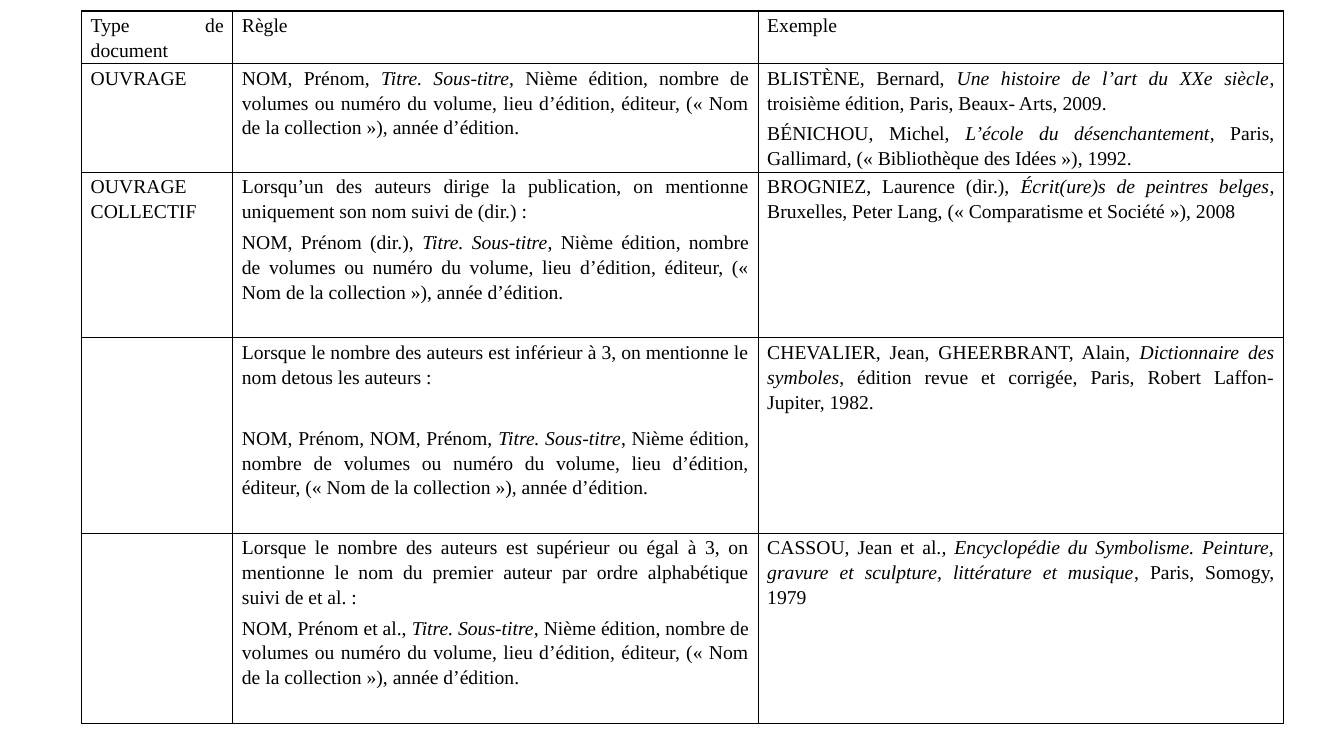
from dataclasses import dataclass

from lxml import etree
from pptx import Presentation
from pptx.dml.color import RGBColor
from pptx.enum import text
from pptx.oxml.ns import qn
from pptx.util import Inches, Pt


@dataclass(frozen=True)
class Theme:
    font: str = "Times New Roman"
    size: float = 14
    ink: str = "000000"
    border: float = 1
    line_spacing: float = 1.15
    space_after: float = 4
    section_gap: float = 21.8


THEME = Theme()
COLUMNS = [1.5, 5.21, 5.21]
ROWS = [0.52, 1.08, 1.64, 1.94, 1.89]
EDITION = (" Nième édition, nombre de volumes ou numéro du volume, lieu d’édition, "
           "éditeur, (« Nom de la collection »), année d’édition.")
TITLE_RULE = "*Titre. Sous-titre*," + EDITION

# Each cell is a list of paragraphs; asterisks enclose italics.
CONTENT = [
    [["Type de document"], ["Règle"], ["Exemple"]],
    [["OUVRAGE"],
     ["NOM, Prénom, *Titre. Sous-titre,*" + EDITION],
     ["BLISTÈNE, Bernard, *Une histoire de l’art du XXe siècle*, troisième édition, "
      "Paris, Beaux- Arts, 2009.",
      "BÉNICHOU, Michel, *L’école du désenchantement*, Paris, Gallimard, "
      "(« Bibliothèque des Idées »), 1992."]],
    [["OUVRAGE COLLECTIF"],
     ["Lorsqu’un des auteurs dirige la publication, on mentionne uniquement "
      "son nom suivi de (dir.) :",
      "NOM, Prénom (dir.), " + TITLE_RULE],
     ["BROGNIEZ, Laurence (dir.), *Écrit(ure)s de peintres belges*, Bruxelles, "
      "Peter Lang, (« Comparatisme et Société »), 2008"]],
    [[],
     ["Lorsque le nombre des auteurs est inférieur à 3, on mentionne le nom "
      "detous les auteurs :",
      "NOM, Prénom, NOM, Prénom, " + TITLE_RULE],
     ["CHEVALIER, Jean, GHEERBRANT, Alain, *Dictionnaire des symboles*, édition "
      "revue et corrigée, Paris, Robert Laffon-Jupiter, 1982."]],
    [[],
     ["Lorsque le nombre des auteurs est supérieur ou égal à 3, on mentionne le nom "
      "du premier auteur par ordre alphabétique suivi de et al. :",
      "NOM, Prénom et al., " + TITLE_RULE],
     ["CASSOU, Jean et al*., Encyclopédie du Symbolisme. Peinture, gravure et "
      "sculpture, littérature et musique*, Paris, Somogy, 1979"]],
]
SPACED_CELL = (3, 1)


def add_borders(cell):
    properties = cell._tc.get_or_add_tcPr()
    for side in ("lnL", "lnR", "lnT", "lnB"):
        line = etree.SubElement(properties, qn(f"a:{side}"), w=str(Pt(THEME.border)))
        fill = etree.SubElement(line, qn("a:solidFill"))
        etree.SubElement(fill, qn("a:srgbClr"), val=THEME.ink)


def write_paragraph(para, marked_text):
    para.alignment = text.PP_ALIGN.JUSTIFY
    para.line_spacing = THEME.line_spacing
    para.space_after = Pt(THEME.space_after)
    for index, part in enumerate(marked_text.split("*")):
        span = para.add_run()
        span.text = part
        span.font.name = THEME.font
        span.font.size = Pt(THEME.size)
        span.font.color.rgb = RGBColor.from_string(THEME.ink)
        span.font.italic = index % 2 == 1


def fill_cell(cell, paragraphs, gap):
    cell.margin_left = cell.margin_right = Inches(0.09)
    cell.margin_top, cell.margin_bottom = Inches(0.01), 0
    add_borders(cell)
    cell.fill.background()
    frame = cell.text_frame
    for index, marked_text in enumerate(paragraphs):
        para = frame.add_paragraph() if index else frame.paragraphs[0]
        write_paragraph(para, marked_text)
        if index and gap:
            para.space_before = Pt(gap)


def add_citation_table(page, left, top):
    table = page.shapes.add_table(
        len(ROWS), len(COLUMNS), Inches(left), Inches(top),
        Inches(sum(COLUMNS)), Inches(sum(ROWS))).table
    table.first_row = table.horz_banding = False
    for column, width in zip(table.columns, COLUMNS):
        column.width = Inches(width)
    for row_index, height in enumerate(ROWS):
        table.rows[row_index].height = Inches(height)
        for column_index, paragraphs in enumerate(CONTENT[row_index]):
            spaced = (row_index, column_index) == SPACED_CELL
            fill_cell(table.cell(row_index, column_index), paragraphs,
                      THEME.section_gap if spaced else 0)


def main():
    deck = Presentation()
    deck.slide_width, deck.slide_height = Inches(13.33), Inches(7.5)
    page = deck.slides.add_slide(deck.slide_layouts[6])
    add_citation_table(page, 0.81, 0.11)
    deck.save("out.pptx")


if __name__ == "__main__":
    main()
